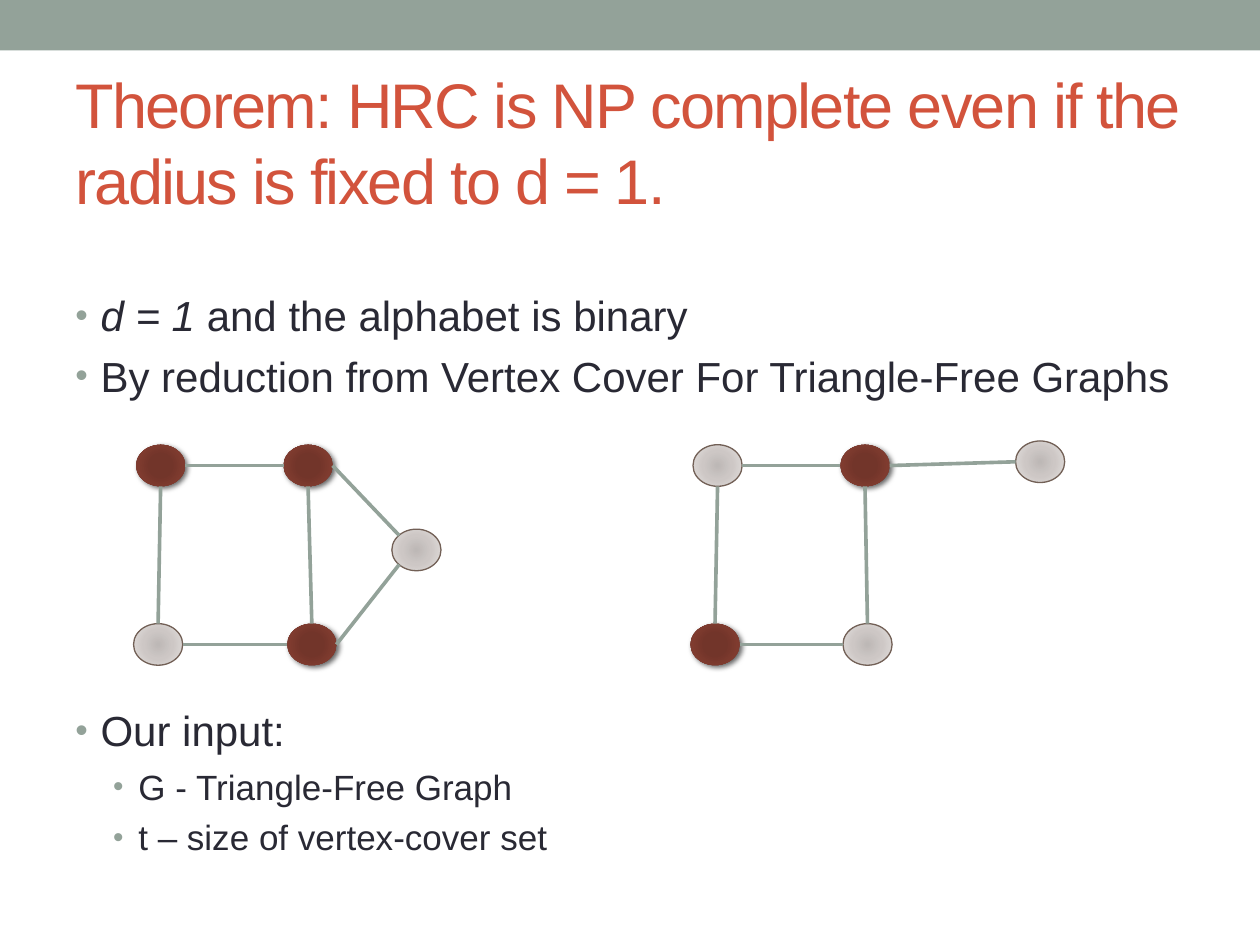
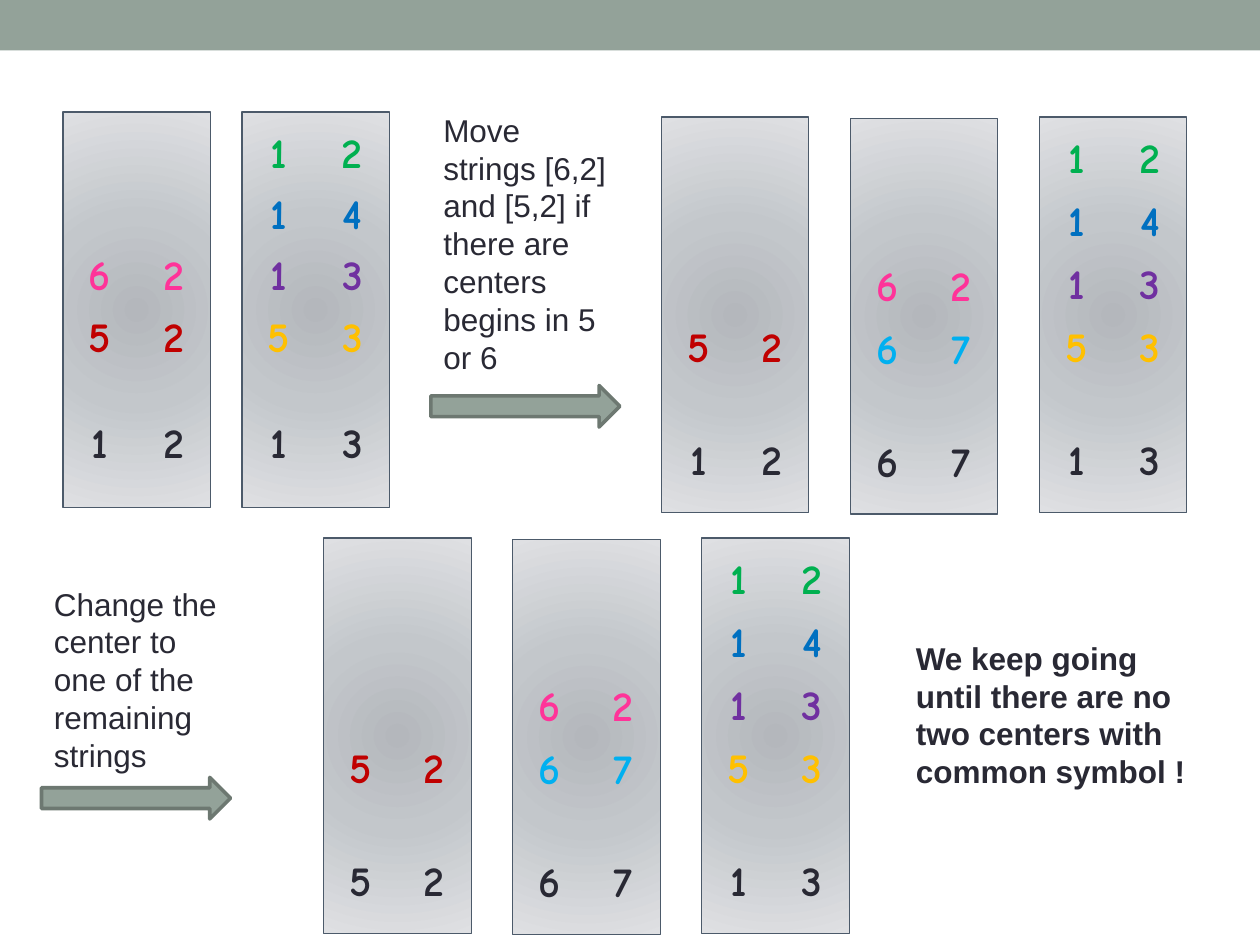
from dataclasses import dataclass

from lxml import etree
from pptx import Presentation
from pptx.dml.color import RGBColor
from pptx.enum import shapes, text
from pptx.oxml import parse_xml
from pptx.oxml.ns import nsdecls, qn
from pptx.util import Inches, Pt

COLUMNS, ROWS = 100, 75  # grid the slide is divided into
NO_GRID_STYLE = "{2D5ABB26-0587-4C30-8999-92F81FD0307C}"


@dataclass(frozen=True)
class Theme:
    sage: str = "93A299"
    sage_edge: str = "6D7871"
    rust: str = "D2533C"
    ink: str = "292934"
    node_edge: str = "726056"
    panel_edge: str = "4C5A6A"
    covered: tuple = ((0, "743327"), (34, "72352A"), (70, "7F3B2F"), (100, "79463D"))
    uncovered: tuple = ((0, "BDB8B6"), (45, "CDC7C5"), (100, "E4E1DF"))
    panel: tuple = ((0, "B4B7BC"), (45, "C3C7CB"), (100, "DFE0E3"))
    font: str = "Arial"
    digit_font: str = "Comic Neue"
    title_size: int = 36
    body_size: int = 24
    sub_size: int = 20
    note_size: int = 18
    digit_size: int = 24
    thick: float = 2.08
    thin: float = 0.75


THEME = Theme()
STRING_COLORS = {"12": "00B050", "14": "0070C0", "13": "7030A0", "53": "FFC000",
                 "62": "FF3399", "52": "C00000", "67": "00B0F0"}


def write_run(paragraph, words, size, color=THEME.ink, font=THEME.font, bold=False, italic=False):
    run = paragraph.add_run()
    run.text = words
    run.font.size, run.font.name = Pt(size), font
    run.font.bold, run.font.italic = bold, italic
    run.font.color.rgb = RGBColor.from_string(color)
    return run


def fill_radial(shape, stops):
    stop_xml = "".join(f'<a:gs pos="{position * 1000}"><a:srgbClr val="{color}"/></a:gs>'
                       for position, color in stops)
    gradient = parse_xml(
        f'<a:gradFill {nsdecls("a")} rotWithShape="1"><a:gsLst>{stop_xml}</a:gsLst>'
        '<a:path path="circle"><a:fillToRect l="50000" t="50000" r="50000" b="50000"/>'
        '</a:path></a:gradFill>')
    shape._element.spPr.find(qn("a:prstGeom")).addnext(gradient)


def add_shadow(shape):
    effects = shape._element.spPr.find(qn("a:effectLst"))
    effects.append(parse_xml(
        f'<a:outerShdw {nsdecls("a")} blurRad="{Pt(3)}" dist="{Pt(2)}" dir="2700000">'
        '<a:srgbClr val="000000"><a:alpha val="60000"/></a:srgbClr></a:outerShdw>'))


def set_bullet(paragraph, left, hanging):
    properties = paragraph._p.get_or_add_pPr()
    properties.set("marL", str(Inches(left)))
    properties.set("indent", str(-Inches(hanging)))
    color = etree.SubElement(properties, qn("a:buClr"))
    etree.SubElement(color, qn("a:srgbClr"), val=THEME.sage)
    etree.SubElement(properties, qn("a:buSzPct"), val="85000")
    etree.SubElement(properties, qn("a:buFont"), typeface=THEME.font)
    etree.SubElement(properties, qn("a:buChar"), char="•")


class Deck:
    """Holds the style and the current slide; lengths are grid columns and rows."""

    def __init__(self, theme):
        self.theme = theme
        self.presentation = Presentation()
        self.presentation.slide_width = Inches(10)
        self.presentation.slide_height = Inches(7.5)
        self.slide = None

    def place(self, x, y):
        return (round(self.presentation.slide_width * x / COLUMNS),
                round(self.presentation.slide_height * y / ROWS))

    def box(self, x, y, width, height):
        return *self.place(x, y), *self.place(width, height)

    def new_slide(self, title=None):
        layout = self.presentation.slide_layouts[6 if title is None else 5]
        self.slide = self.presentation.slides.add_slide(layout)
        self.shape("RECTANGLE", 0, 0, COLUMNS, 4, fill=self.theme.sage)
        if title is not None:
            self.title(title)

    def title(self, words):
        placeholder = self.slide.shapes.title
        placeholder.left, placeholder.top, placeholder.width, placeholder.height = \
            self.box(5, 5.8, 90, 10.8)
        frame = placeholder.text_frame
        frame.auto_size = text.MSO_AUTO_SIZE.NONE
        frame.vertical_anchor = text.MSO_ANCHOR.MIDDLE
        paragraph = frame.paragraphs[0]
        paragraph.alignment = text.PP_ALIGN.LEFT
        run = write_run(paragraph, words, self.theme.title_size, self.theme.rust)
        run.font._element.set("spc", "-100")

    def shape(self, kind, x, y, width, height, fill, line=None, line_width=THEME.thin):
        shape = self.slide.shapes.add_shape(
            getattr(shapes.MSO_SHAPE, kind), *self.box(x, y, width, height))
        shape.shadow.inherit = False
        if isinstance(fill, tuple):
            fill_radial(shape, fill)
        else:
            shape.fill.solid()
            shape.fill.fore_color.rgb = RGBColor.from_string(fill)
        if line is None:
            shape.line.fill.background()
        else:
            shape.line.color.rgb = RGBColor.from_string(line)
            shape.line.width = Pt(line_width)
        return shape

    def text_box(self, x, y, width, height):
        frame = self.slide.shapes.add_textbox(*self.box(x, y, width, height)).text_frame
        frame.word_wrap = True
        return frame

    def note(self, words, x, y, width, height, bold=False):
        frame = self.text_box(x, y, width, height)
        write_run(frame.paragraphs[0], words, self.theme.note_size, bold=bold)

    def line(self, start, end):
        connector = self.slide.shapes.add_connector(
            shapes.MSO_CONNECTOR.STRAIGHT, *self.place(*start), *self.place(*end))
        connector.line.color.rgb = RGBColor.from_string(self.theme.sage)
        connector.line.width = Pt(self.theme.thick)
        etree.SubElement(connector._element.spPr, qn("a:effectLst"))

    def arrow(self, x, y):
        self.shape("RIGHT_ARROW", x, y, 15, 3.3, self.theme.sage,
                   self.theme.sage_edge, self.theme.thick)

    def bullets(self, items, x, y, width, height, top_margin):
        """Each item: level, extra gap after it in points, then (words, italic) runs."""
        frame = self.text_box(x, y, width, height)
        frame.margin_top = Inches(top_margin)
        for index, (level, gap, *runs) in enumerate(items):
            paragraph = frame.add_paragraph() if index else frame.paragraphs[0]
            size = self.theme.sub_size if level else self.theme.body_size
            paragraph.level = level
            paragraph.space_after = Pt(round(size * 0.24, 1) + gap)
            set_bullet(paragraph, 0.5 if level else 0.2, 0.2)
            for words, italic in runs:
                write_run(paragraph, words, size, italic=italic)

    def graph(self, nodes, edges):
        """nodes: name -> (x, y, covered); edges: (name, side, name, side)."""
        width, height = 3.9, 3.3
        sides = {"top": (0, -0.5), "left": (-0.5, 0), "bottom": (0, 0.5), "right": (0.5, 0),
                 "upper left": (-0.35, -0.35), "lower left": (-0.35, 0.35)}
        for x, y, covered in nodes.values():
            if covered:
                add_shadow(self.shape("OVAL", x, y, width, height, self.theme.covered))
            else:
                self.shape("OVAL", x, y, width, height, self.theme.uncovered,
                           self.theme.node_edge)

        def anchor(name, side):
            x, y, _ = nodes[name]
            across, down = sides[side]
            return x + (0.5 + across) * width, y + (0.5 + down) * height

        for first, first_side, second, second_side in edges:
            self.line(anchor(first, first_side), anchor(second, second_side))

    def cluster(self, x, y, strings, center, pitch=5, bottom_margin=0.07):
        """A panel with its strings stacked above the center string."""
        width, height = 11.7, 29
        self.shape("RECTANGLE", x, y, width, 31.4, self.theme.panel, self.theme.panel_edge)
        frame = self.slide.shapes.add_table(5, 2, *self.box(x, y + 1, width, height))
        table = frame.table
        table.first_row = table.horz_banding = False
        table._tbl.tblPr.find(qn("a:tableStyleId")).text = NO_GRID_STYLE
        rows = [""] * (4 - len(strings)) + strings + [center]
        for index, string in enumerate(rows):
            is_center = index == 4
            row_height = height - 4 * pitch if is_center else pitch
            table.rows[index].height = self.place(0, row_height)[1]
            color = self.theme.ink if is_center else STRING_COLORS.get(string)
            for column in range(2):
                cell = table.cell(index, column)
                cell.fill.background()
                if is_center:
                    cell.vertical_anchor = text.MSO_ANCHOR.BOTTOM
                    cell.margin_bottom = Inches(bottom_margin)
                if string:
                    paragraph = cell.text_frame.paragraphs[0]
                    paragraph.alignment = text.PP_ALIGN.CENTER
                    write_run(paragraph, string[column], self.theme.digit_size, color,
                              self.theme.digit_font, bold=True)


def build_theorem_slide(deck):
    deck.new_slide("Theorem: HRC is NP complete even if the radius is fixed to d = 1.")
    deck.bullets([
        (0, 0, ("d = 1", True), (" and the alphabet is binary", False)),
        (0, 168, ("By reduction from Vertex Cover For Triangle-Free Graphs", False)),
        (0, 0, ("Our input:", False)),
        (1, 0, ("G - Triangle-Free Graph", False)),
        (1, 0, ("t – size of vertex-cover set", False)),
    ], 5, 17.5, 90, 53.3, top_margin=0.55)

    # Both graphs share a square of four nodes
    square = [("a", "right", "b", "left"), ("a", "bottom", "c", "top"),
              ("c", "right", "d", "left"), ("b", "bottom", "d", "top")]
    deck.graph({"a": (10.8, 35.3, True), "b": (22.5, 35.3, True), "c": (10.6, 49.5, False),
                "d": (22.8, 49.5, True), "e": (31.1, 42, False)},
               square + [("b", "right", "e", "upper left"), ("d", "right", "e", "lower left")])
    deck.graph({"a": (55, 35.3, False), "b": (66.7, 35.3, True), "c": (54.8, 49.5, True),
                "d": (66.9, 49.5, False), "e": (80.6, 35, False)},
               square + [("b", "right", "e", "left")])


def build_clusters_slide(deck):
    deck.new_slide()
    ones = ["12", "14", "13", "53"]

    # Starting clusters
    deck.cluster(5, 8.9, ["62", "52"], "12", pitch=4.85, bottom_margin=0.17)
    deck.cluster(19.2, 8.9, ones, "13", pitch=4.85, bottom_margin=0.17)

    # Step 1: move strings; step 2: change the center
    for x, y, first_center in ((52.5, 9.3, "12"), (25.7, 42.7, "52")):
        deck.cluster(x, y, ["52"], first_center)
        deck.cluster(x + 15, y + 0.1, ["62", "67"], "67")
        deck.cluster(x + 30, y, ones, "13")

    # Explanations
    deck.note("Move strings [6,2] and [5,2] if there are centers begins in 5 or 6",
              34.2, 8.3, 15, 22.2)
    deck.arrow(34.2, 30.6)
    deck.note("Change the center to one of the remaining strings", 3.3, 45.9, 15, 16.1)
    deck.arrow(3.3, 61.7)
    deck.note("We keep going until there are no two centers with common symbol !",
              71.7, 50.2, 24.2, 13.1, bold=True)


def main():
    deck = Deck(THEME)
    build_theorem_slide(deck)
    build_clusters_slide(deck)
    deck.presentation.save("out.pptx")


if __name__ == "__main__":
    main()
